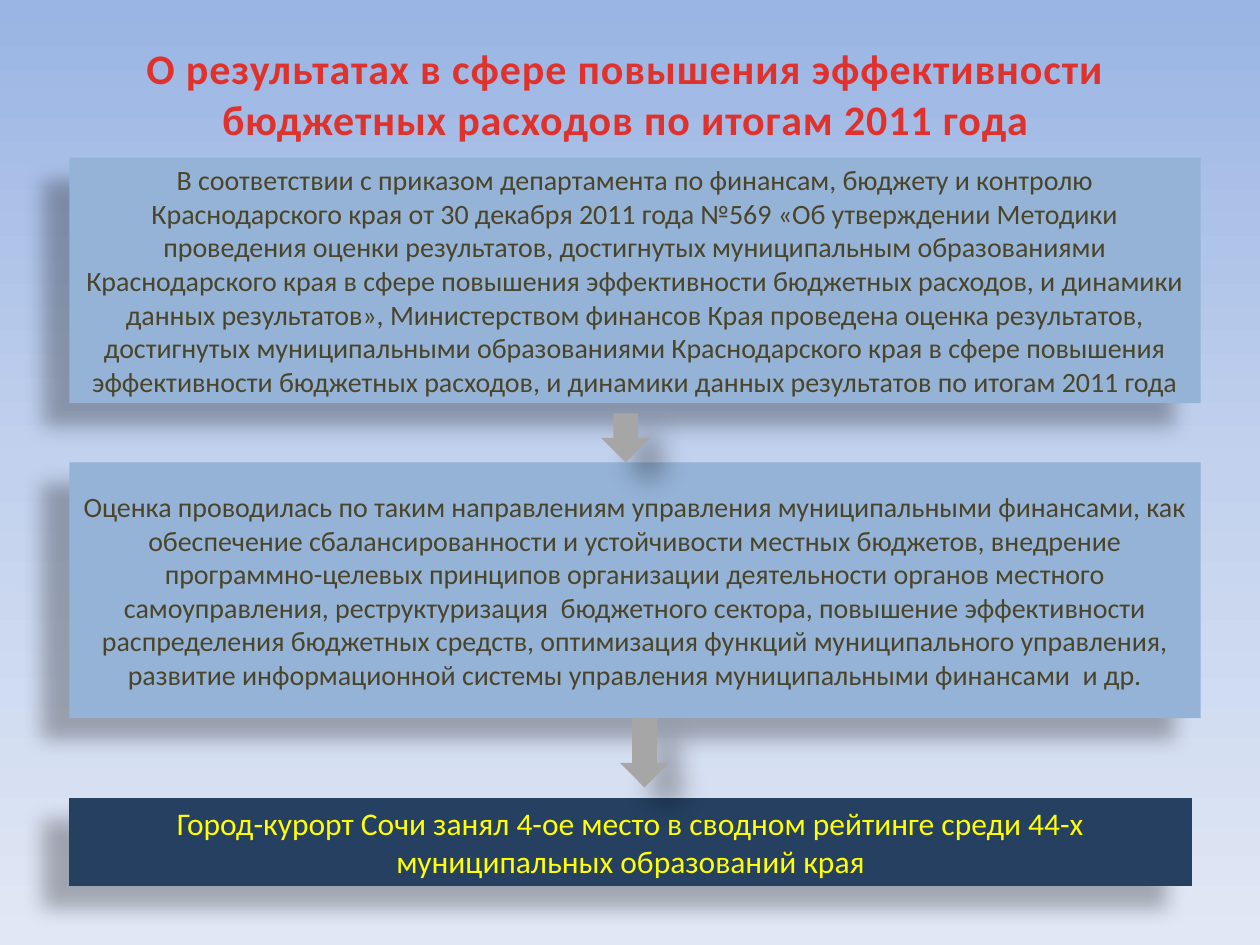
from copy import deepcopy

from lxml import etree
from pptx import Presentation
from pptx import util as u
from pptx.dml.color import RGBColor
from pptx.enum import shapes, text
from pptx.oxml.ns import qn

RED = RGBColor(0xE0, 0x32, 0x2D)
LIGHT_BLUE = RGBColor(0x95, 0xB3, 0xD7)
NAVY = RGBColor(0x25, 0x40, 0x61)
GREY = RGBColor(0xA6, 0xA6, 0xA6)
OLIVE = RGBColor(0x4A, 0x45, 0x2A)
YELLOW = RGBColor(0xFF, 0xFF, 0x00)
SKY = [(0, "9AB5E4"), (50, "C2D1ED"), (100, "E1E8F5")]

# opacity %, blur pt, distance pt, direction in degrees
BOX_SHADOW = (28, 11.8, 19.7, 141)
ARROW_SHADOW = (30, 15, 18, 45)

TITLE = "О результатах в сфере повышения эффективности бюджетных расходов по итогам 2011 года"
ORDER = (
    "В соответствии с приказом департамента по финансам, бюджету и контролю "
    "Краснодарского края от 30 декабря 2011 года №569 «Об утверждении Методики "
    "проведения оценки результатов, достигнутых муниципальным образованиями "
    "Краснодарского края в сфере повышения эффективности бюджетных расходов, и динамики "
    "данных результатов», Министерством финансов Края проведена оценка результатов, "
    "достигнутых муниципальными образованиями Краснодарского края в сфере повышения "
    "эффективности бюджетных расходов, и динамики данных результатов по итогам 2011 года"
)
DIRECTIONS = (
    "Оценка проводилась по таким направлениям управления муниципальными финансами, как "
    "обеспечение сбалансированности и устойчивости местных бюджетов, внедрение "
    "программно-целевых принципов организации деятельности органов местного "
    "самоуправления, реструктуризация  бюджетного сектора, повышение эффективности "
    "распределения бюджетных средств, оптимизация функций муниципального управления, "
    "развитие информационной системы управления муниципальными финансами  и др."
)
RESULT = "Город-курорт Сочи занял 4-ое место в сводном рейтинге среди 44-х муниципальных образований края"

LEFT, BOX_WIDTH, RESULT_WIDTH = 0.55, 8.98, 8.91
ARROW_WIDTH = 0.39
STEPS = [(1.25, 1.95, ORDER), (3.67, 2.03, DIRECTIONS)]  # top, height, wording
RESULT_TOP, RESULT_HEIGHT = 6.33, 0.7
ARROWS = [(4.77, 3.28, 0.39), (4.92, 5.7, 0.55)]  # left, top, height


def inches(*lengths):
    return [u.Inches(length) for length in lengths]


def paint_background(slide, stops):
    """Fill the background with a top-to-bottom gradient of any number of stops."""
    fill = slide.background.fill
    fill.gradient()
    fill.gradient_angle = 270
    stop_list = slide.element.find(".//" + qn("a:gsLst"))
    template = deepcopy(stop_list[0])
    for stop in list(stop_list):
        stop_list.remove(stop)
    for position, colour in stops:
        stop = deepcopy(template)
        stop.set("pos", str(position * 1000))
        for child in list(stop):
            stop.remove(child)
        etree.SubElement(stop, qn("a:srgbClr"), val=colour)
        stop_list.append(stop)


def style(shape, colour, shadow):
    opacity, blur, distance, direction = shadow
    shape.fill.solid()
    shape.fill.fore_color.rgb = colour
    shape.line.fill.background()
    shape.shadow.inherit = False
    effects = shape.element.spPr.find(qn("a:effectLst"))
    outer = etree.SubElement(
        effects, qn("a:outerShdw"), blurRad=str(u.Pt(blur)), dist=str(u.Pt(distance)),
        dir=str(direction * 60000), algn="ctr", rotWithShape="0")
    black = etree.SubElement(outer, qn("a:srgbClr"), val="000000")
    etree.SubElement(black, qn("a:alpha"), val=str(opacity * 1000))


def write(shape, wording, size, colour):
    """Set centred text and return its run."""
    frame = shape.text_frame
    frame.text = wording
    frame.word_wrap = True
    frame.vertical_anchor = text.MSO_ANCHOR.MIDDLE
    paragraph = frame.paragraphs[0]
    paragraph.alignment = text.PP_ALIGN.CENTER
    run = paragraph.runs[0]
    run.font.name = "Calibri"
    run.font.size = u.Pt(size)
    run.font.color.rgb = colour
    return run


def main():
    presentation = Presentation()
    presentation.slide_width, presentation.slide_height = inches(10, 7.5)
    slide = presentation.slides.add_slide(presentation.slide_layouts[6])
    paint_background(slide, SKY)

    for index, (top, height, wording) in enumerate(STEPS):
        box = slide.shapes.add_shape(
            shapes.MSO_SHAPE.RECTANGLE, *inches(LEFT, top, BOX_WIDTH, height))
        style(box, LIGHT_BLUE, BOX_SHADOW)
        write(box, wording, 16, OLIVE)
        if index == 0:
            title = slide.shapes.add_textbox(*inches(LEFT, 0.39, 8.83, 0.7))
            run = write(title, TITLE, 24, RED)
            run.font.bold = True
            run.font._element.set("spc", "50")

    right, bottom = LEFT + RESULT_WIDTH, RESULT_TOP + RESULT_HEIGHT
    builder = slide.shapes.build_freeform(*inches(LEFT, RESULT_TOP))
    builder.add_line_segments(
        [inches(right, RESULT_TOP), inches(right, bottom), inches(LEFT, bottom)], close=True)
    result = builder.convert_to_shape()
    style(result, NAVY, BOX_SHADOW)
    write(result, RESULT, 18, YELLOW)

    for left, top, height in ARROWS:
        arrow = slide.shapes.add_shape(
            shapes.MSO_SHAPE.DOWN_ARROW, *inches(left, top, ARROW_WIDTH, height))
        style(arrow, GREY, ARROW_SHADOW)

    presentation.save("out.pptx")


if __name__ == "__main__":
    main()
